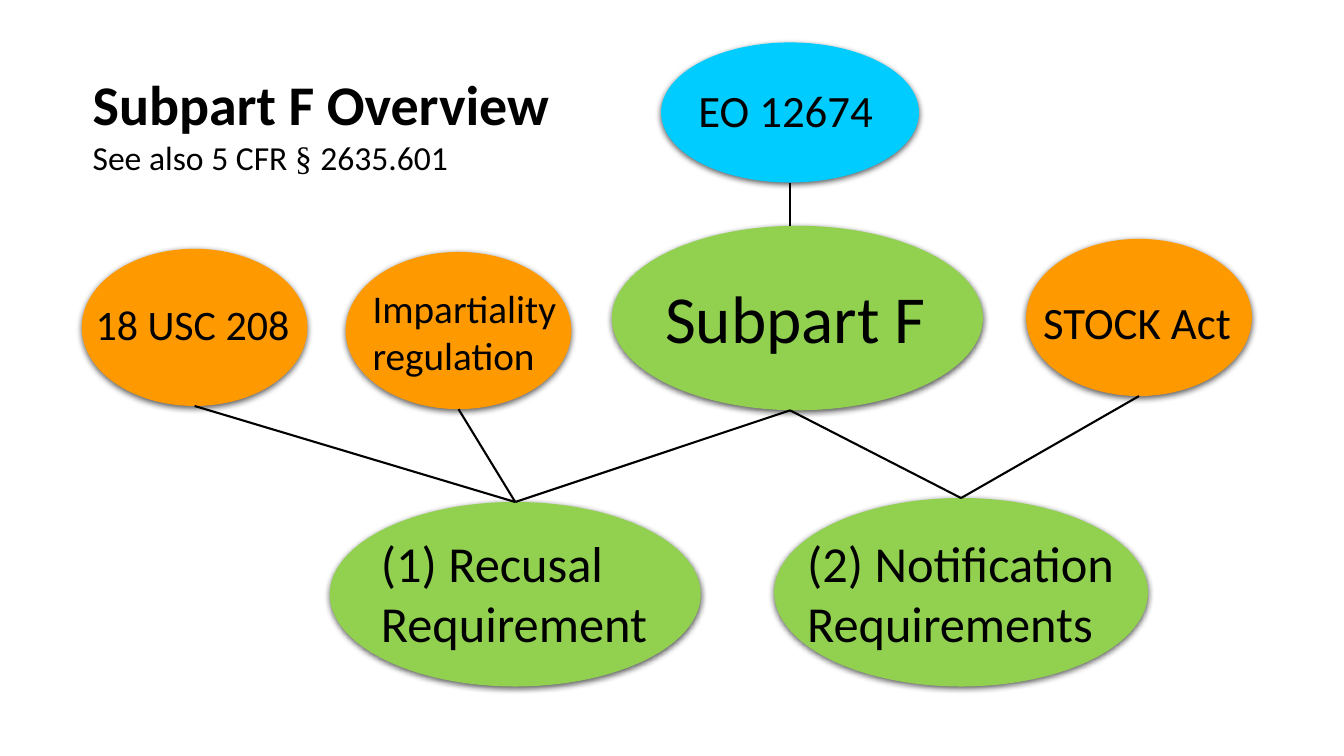
from dataclasses import dataclass

from lxml.etree import SubElement
from pptx import Presentation
from pptx.dml.color import RGBColor
from pptx.enum.shapes import MSO_CONNECTOR as Connector, MSO_SHAPE as Shape
from pptx.enum.text import MSO_ANCHOR as Anchor, MSO_AUTO_SIZE as AutoSize, PP_ALIGN as Align
from pptx.oxml.ns import qn
from pptx.util import Cm, Pt


@dataclass(frozen=True)
class Theme:
    ink: str = "000000"
    law: str = "FF9900"
    order: str = "00CCFF"
    rule: str = "92D050"
    font: str = "Calibri"
    symbol_font: str = "Times New Roman"
    title: int = 40
    subtitle: int = 24
    hub: int = 48
    requirement: int = 36
    source: int = 32
    statute: int = 30
    regulation: int = 28
    line: float = 1.5


class Diagram:
    def __init__(self, slide, theme):
        self.slide = slide
        self.theme = theme

    def style(self, font, size, name=None, bold=False):
        font.name = name or self.theme.font
        font.size = Pt(size)
        font.bold = bold
        font.color.rgb = RGBColor.from_string(self.theme.ink)

    def title(self, heading, spans, left, top, width, height):
        box = self.slide.shapes.title
        box.left, box.top, box.width, box.height = map(Cm, (left, top, width, height))
        frame = box.text_frame
        frame.word_wrap = True
        frame.auto_size = AutoSize.NONE
        frame.vertical_anchor = Anchor.TOP
        frame.text = heading
        self.style(frame.paragraphs[0].runs[0].font, self.theme.title, bold=True)
        subtitle = frame.add_paragraph()
        for text, name in spans:
            span = subtitle.add_run()
            span.text = text
            self.style(span.font, self.theme.subtitle, name)
        for para in frame.paragraphs:
            para.alignment = Align.LEFT
            para.line_spacing = 1.0
            para.space_before = Pt(0)

    def oval(self, color, left, top, width, height):
        oval = self.slide.shapes.add_shape(Shape.OVAL, *map(Cm, (left, top, width, height)))
        oval.fill.solid()
        oval.fill.fore_color.rgb = RGBColor.from_string(color)
        oval.line.fill.background()
        oval.shadow.inherit = False
        effects = oval._element.spPr.find(qn("a:effectLst"))
        shadow = SubElement(effects, qn("a:outerShdw"), blurRad=str(Pt(4.5)), dist=str(Pt(1.5)),
                            dir="5400000", algn="t", rotWithShape="0")
        shade = SubElement(shadow, qn("a:srgbClr"), val=self.theme.ink)
        SubElement(shade, qn("a:alpha"), val="63000")
        return oval

    def label(self, text, size, left, top, width, height):
        box = self.slide.shapes.add_textbox(*map(Cm, (left, top, width, height)))
        frame = box.text_frame
        frame.word_wrap = True
        frame.text = text
        for para in frame.paragraphs:
            self.style(para.runs[0].font, size)

    def line(self, x, upper, lower, join=False):
        line = self.slide.shapes.add_connector(
            Connector.STRAIGHT, x, upper.top + upper.height, x, lower.top)
        if join:
            line.end_connect(lower, 0)
        line.line.color.rgb = RGBColor.from_string(self.theme.ink)
        line.line.width = Pt(self.theme.line)
        SubElement(line._element.spPr, qn("a:effectLst"))


def middle(shape):
    return shape.left + shape.width // 2


def main():
    deck = Presentation()
    deck.slide_width, deck.slide_height = Cm(33.87), Cm(19.05)
    page = deck.slides.add_slide(deck.slide_layouts[5])
    theme = Theme()
    diagram = Diagram(page, theme)

    diagram.title("Subpart F Overview",
                  [("See also 5 CFR ", theme.font), ("§ ", theme.symbol_font),
                   ("2635.601", theme.font)],
                  2.08, 1.63, 14.2, 3)

    stock_act = diagram.oval(theme.law, 25.86, 6.02, 5.69, 3.96)
    subpart = diagram.oval(theme.rule, 15.42, 5.69, 9.35, 4.65)
    statute = diagram.oval(theme.law, 2.06, 6.27, 5.69, 3.96)
    impartiality = diagram.oval(theme.law, 8.71, 6.35, 5.69, 3.96)
    order = diagram.oval(theme.order, 16.66, 1.07, 6.5, 3.53)
    recusal = diagram.oval(theme.rule, 8.31, 12.65, 9.35, 4.65)
    notification = diagram.oval(theme.rule, 19.51, 12.55, 9.42, 4.75)

    stem = middle(order)
    diagram.line(stem, order, subpart)
    for x, upper, lower in [
        (stem, subpart, recusal),
        (stem, subpart, notification),
        (middle(stock_act), stock_act, notification),
        (middle(impartiality), impartiality, recusal),
        (middle(statute), statute, recusal),
    ]:
        diagram.line(x, upper, lower, join=True)

    for label in [
        ("Subpart F", theme.hub, 16.51, 6.83, 8.36, 2.31),
        ("18 USC 208", theme.statute, 2.16, 7.39, 6.3, 1.55),
        ("Impartiality\nregulation", theme.regulation, 9.14, 7.04, 5.44, 2.64),
        ("STOCK Act", theme.source, 26.04, 7.29, 6.3, 1.63),
        ("(1) Recusal\nRequirement", theme.requirement, 9.35, 13.28, 8.64, 3.33),
        ("(2) Notification\nRequirements", theme.requirement, 20.09, 13.28, 10.46, 3.33),
        ("EO 12674", theme.source, 17.35, 1.96, 5.66, 1.63),
    ]:
        diagram.label(*label)

    deck.save("out.pptx")


if __name__ == "__main__":
    main()
